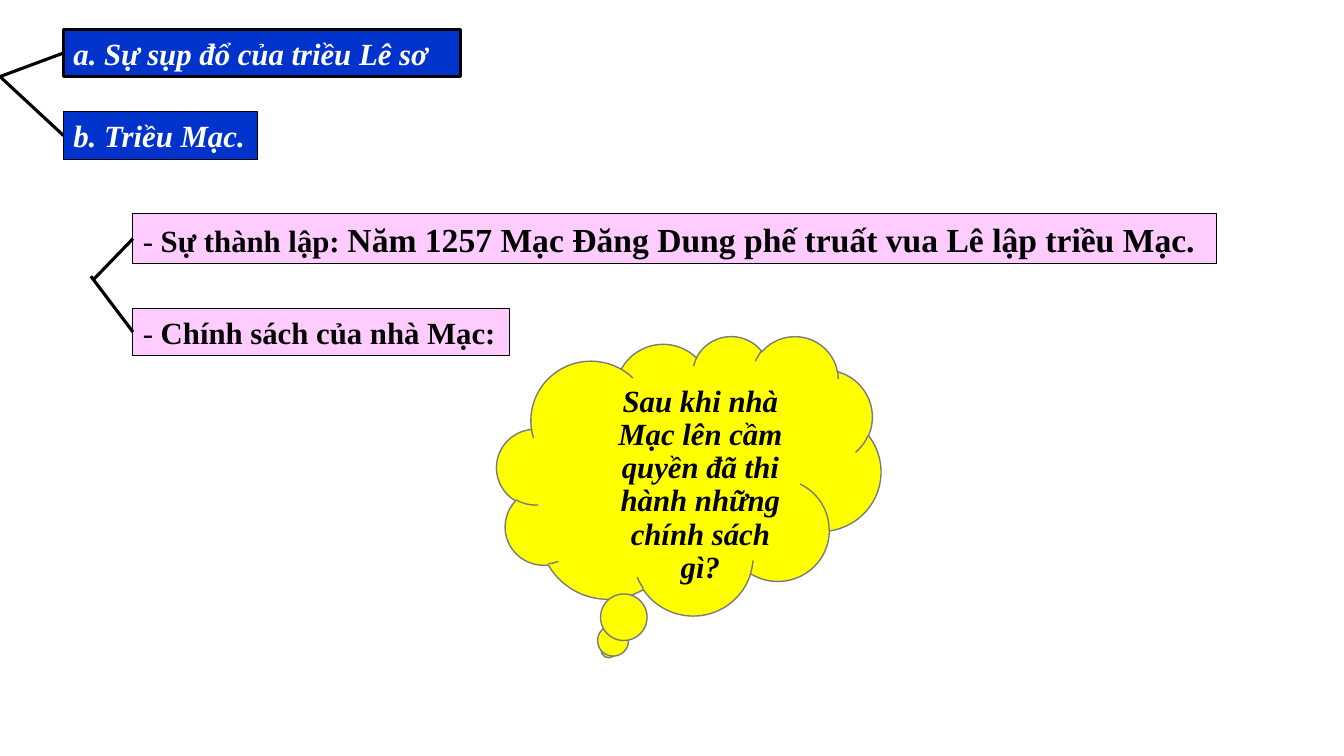
from lxml.etree import SubElement
from pptx import Presentation
from pptx.dml.color import RGBColor
from pptx.enum.shapes import MSO_CONNECTOR, MSO_SHAPE
from pptx.enum.text import MSO_ANCHOR, PP_ALIGN
from pptx.oxml.ns import qn
from pptx.util import Cm, Pt

BLACK = RGBColor(0x00, 0x00, 0x00)
WHITE = RGBColor(0xFF, 0xFF, 0xFF)
BLUE = RGBColor(0x00, 0x33, 0xCC)
PINK = RGBColor(0xFF, 0xCC, 0xFF)
YELLOW = RGBColor(0xFF, 0xFF, 0x00)
GREY = RGBColor(0x7A, 0x7A, 0x7A)
FONT = "Times New Roman"


def add_run(p, text, color, size=22, bold=True, italic=False):
    r = p.add_run()
    r.text = text
    r.font.name = FONT
    r.font.size = Pt(size)
    r.font.bold = bold
    r.font.italic = italic
    r.font.color.rgb = color


def add_filled(slide, kind, left, top, width, height, fill, line, weight):
    sp = slide.shapes.add_shape(kind, Cm(left), Cm(top), Cm(width), Cm(height))
    sp.shadow.inherit = False
    sp.fill.solid()
    sp.fill.fore_color.rgb = fill
    sp.line.color.rgb = line
    sp.line.width = Pt(weight)
    return sp


def add_label(slide, left, top, width, height, fill, align, weight=0.75):
    sp = add_filled(slide, MSO_SHAPE.RECTANGLE, left, top, width, height,
                    fill, BLACK, weight)
    tf = sp.text_frame
    tf.word_wrap = False
    tf.vertical_anchor = MSO_ANCHOR.TOP
    tf.paragraphs[0].alignment = align
    return sp


def add_branch(slide, x, y, label):
    line = slide.shapes.add_connector(MSO_CONNECTOR.STRAIGHT, Cm(x), Cm(y),
                                      label.left, label.top + label.height // 2)
    line.end_connect(label, 1)
    line.line.color.rgb = BLACK
    line.line.width = Pt(2.25)
    SubElement(line._element.spPr, qn("a:effectLst"))


def add_headings(slide, left, top):
    x = left + 1.6
    fall = add_label(slide, x, top, 10, 1.19, BLUE, PP_ALIGN.JUSTIFY, 2.25)
    fall.text_frame.word_wrap = True
    p = fall.text_frame.paragraphs[0]
    SubElement(p._p.get_or_add_pPr(), qn("a:buAutoNum"), type="alphaLcPeriod")
    add_run(p, " Sự sụp đổ của triều Lê sơ", WHITE, italic=True)

    mac = add_label(slide, x, top + 2.08, 4.88, 1.19, BLUE, PP_ALIGN.JUSTIFY)
    add_run(mac.text_frame.paragraphs[0], "b. Triều Mạc.", WHITE, italic=True)

    for label in (fall, mac):
        add_branch(slide, left, top + 1.19, label)


def add_details(slide, left, top):
    x = left + 1.06
    founding = add_label(slide, x, top, 27.31, 1.27, PINK, PP_ALIGN.LEFT)
    policy = add_label(slide, x, top + 2.39, 9.5, 1.19, PINK, PP_ALIGN.LEFT)
    for label, title in ((founding, "Sự thành lập: "),
                         (policy, "Chính sách của nhà Mạc:")):
        p = label.text_frame.paragraphs[0]
        add_run(p, "- ", BLACK, bold=False)
        add_run(p, title, BLACK)
    add_run(founding.text_frame.paragraphs[0],
            "Năm 1257 Mạc Đăng Dung phế truất vua Lê lập triều Mạc.", BLACK, 24)
    add_branch(slide, left + 0.07, top + 1.66, founding)
    add_branch(slide, left, top + 1.58, policy)


def add_question(slide, left, top, width, height):
    cloud = add_filled(slide, MSO_SHAPE.CLOUD_CALLOUT, left, top, width, height,
                       YELLOW, GREY, 1)
    tf = cloud.text_frame
    tf.word_wrap = True
    tf.vertical_anchor = MSO_ANCHOR.MIDDLE
    tf.margin_top = Cm(0.95)
    p = tf.paragraphs[0]
    p.level = 1
    p.alignment = PP_ALIGN.CENTER
    p.line_spacing = 0.9
    p._p.get_or_add_pPr().set("marL", str(Cm(1.27)))
    add_run(p, "Sau khi nhà Mạc lên cầm quyền đã thi hành những chính sách gì?",
            BLACK, italic=True)


def main():
    prs = Presentation()
    prs.slide_width = Cm(33.87)
    prs.slide_height = Cm(19.05)
    slide = prs.slides.add_slide(prs.slide_layouts[6])
    add_headings(slide, 0, 0.74)
    add_details(slide, 2.29, 5.38)
    add_question(slide, 12.52, 8.46, 9.68, 7.04)
    prs.save("out.pptx")


if __name__ == "__main__":
    main()
